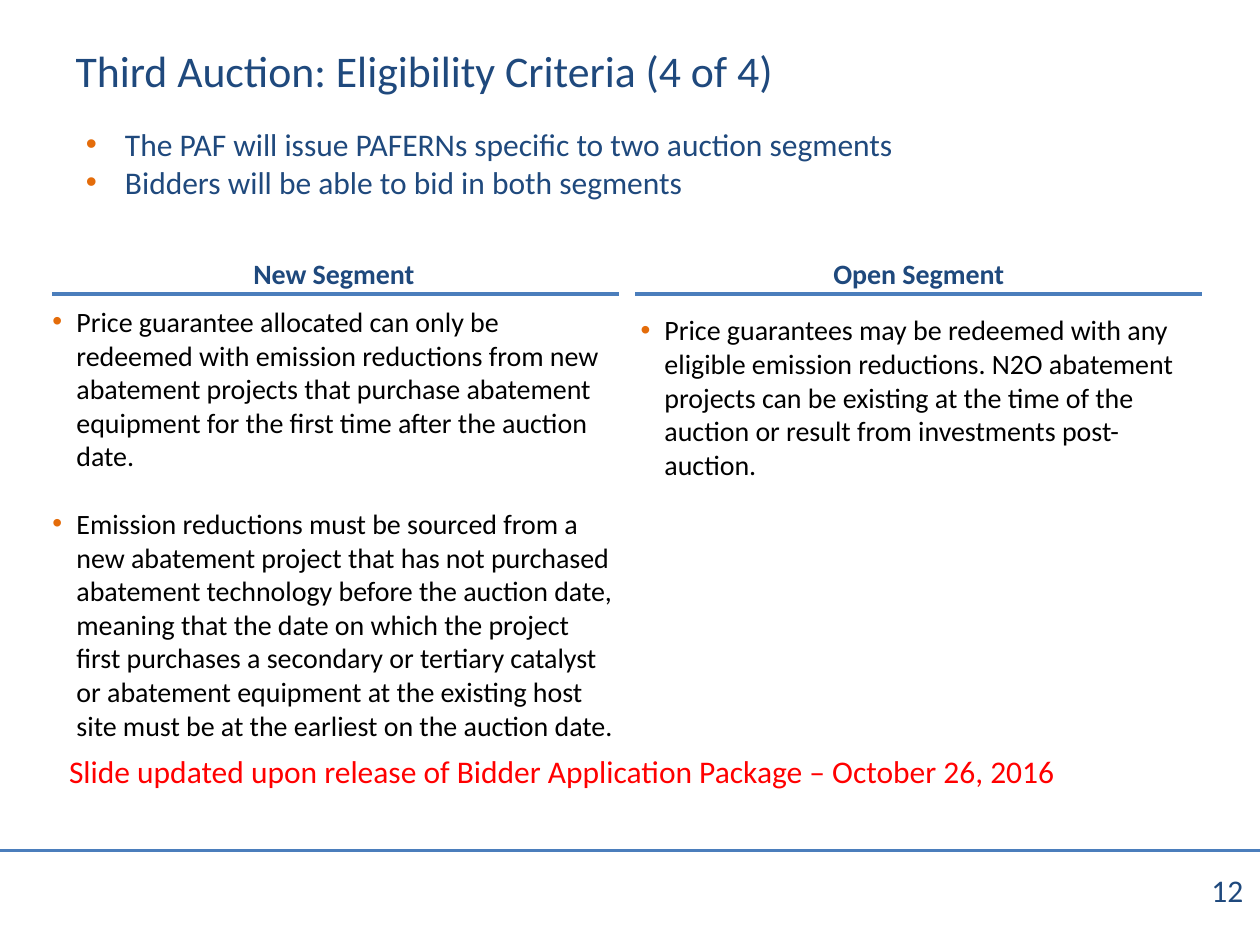
"""Build the slide on eligibility criteria for the third auction."""
from lxml import etree
from pptx import Presentation, util as u
from pptx.dml.color import RGBColor
from pptx.enum import shapes, text
from pptx.oxml.ns import qn

THEME = dict(font="Calibri", navy="1F497D", black="000000", red="FF0000", dot="E46C0A",
             rule="4B7EBC", title=25, lead=18, body=16)

deck = Presentation()
deck.slide_width, deck.slide_height = u.Inches(10), u.Inches(7.5)
unit = deck.slide_width / 120
slide = deck.slides.add_slide(deck.slide_layouts[4])
title, left_head, left_list, right_head, right_list = slide.placeholders


def write(box, area, lines, size, color, bold=False, center=False, inset=(0.1, 0.05), hang=0, gap=0):
    box.left, box.top, box.width, box.height = (round(n * unit) for n in area)
    frame = box.text_frame
    frame.word_wrap, frame.auto_size = True, text.MSO_AUTO_SIZE.NONE
    frame.vertical_anchor = text.MSO_ANCHOR.TOP
    frame.margin_left = frame.margin_right = u.Inches(inset[0])
    frame.margin_top = frame.margin_bottom = u.Inches(inset[1])
    for i, line in enumerate(lines):
        para = frame.add_paragraph() if i else frame.paragraphs[0]
        para.alignment = text.PP_ALIGN.CENTER if center else text.PP_ALIGN.LEFT
        para.space_before = u.Pt(gap if i else 0)
        if hang:
            props = para._p.get_or_add_pPr()
            props.set("marL", str(u.Inches(hang)))
            props.set("indent", str(-u.Inches(hang)))
            tint = etree.SubElement(props, qn("a:buClr"))
            etree.SubElement(tint, qn("a:srgbClr"), val=THEME["dot"])
            etree.SubElement(props, qn("a:buFont"), typeface="Arial")
            etree.SubElement(props, qn("a:buChar"), char="•")
        run = para.add_run()
        run.text = line
        run.font.name, run.font.size, run.font.bold = THEME["font"], u.Pt(THEME[size]), bold
        run.font.color.rgb = RGBColor.from_string(THEME[color])


def label(area, lines, color, **style):
    write(slide.shapes.add_textbox(0, 0, 0, 0), area, lines, "lead", color, **style)


write(title, (6, 3.6, 111, 6.2), ["Third Auction: Eligibility Criteria (4 of 4)"], "title", "navy")
label((7, 11.3, 105, 8.5),
      ["The PAF will issue PAFERNs specific to two auction segments",
       "Bidders will be able to bid in both segments"], "navy", hang=0.31)

new = [
    "Price guarantee allocated can only be redeemed with emission reductions from new abatement "
    "projects that purchase abatement equipment for the first time after the auction date.",
    "Emission reductions must be sourced from a new abatement project that has not purchased "
    "abatement technology before the auction date, meaning that the date on which the project first "
    "purchases a secondary or tertiary catalyst or abatement equipment at the existing host site "
    "must be at the earliest on the auction date."]
both = [
    "Price guarantees may be redeemed with any eligible emission reductions. N2O abatement projects "
    "can be existing at the time of the auction or result from investments post-auction."]

for head, name, x, body, items, col, row in (
        (left_head, "New Segment", 4.8, left_list, new, 5, 29),
        (right_head, "Open Segment", 60.5, right_list, both, 61, 29.8)):
    write(head, (x, 23.8, 54, 4.4), [name], "body", "navy", bold=True, center=True)
    write(body, (col, row, 54, 24), items, "body", "black", inset=(0, 0), hang=0.19, gap=19.5)

for x, y, span, weight in ((5, 28, 54, 2), (60.5, 28, 54, 2), (0, 81, 120, 1.5)):
    rule = slide.shapes.add_connector(
        shapes.MSO_CONNECTOR.STRAIGHT, *(round(n * unit) for n in (x, y, x + span, y)))
    rule.line.color.rgb = RGBColor.from_string(THEME["rule"])
    rule.line.width = u.Pt(weight)
    etree.SubElement(rule._element.spPr, qn("a:effectLst"))

label((5.4, 71, 109, 4.8),
      ["Slide updated upon release of Bidder Application Package – October 26, 2016"], "red")
label((114.2, 82.4, 6, 4.8), ["12"], "navy")

deck.save("out.pptx")
